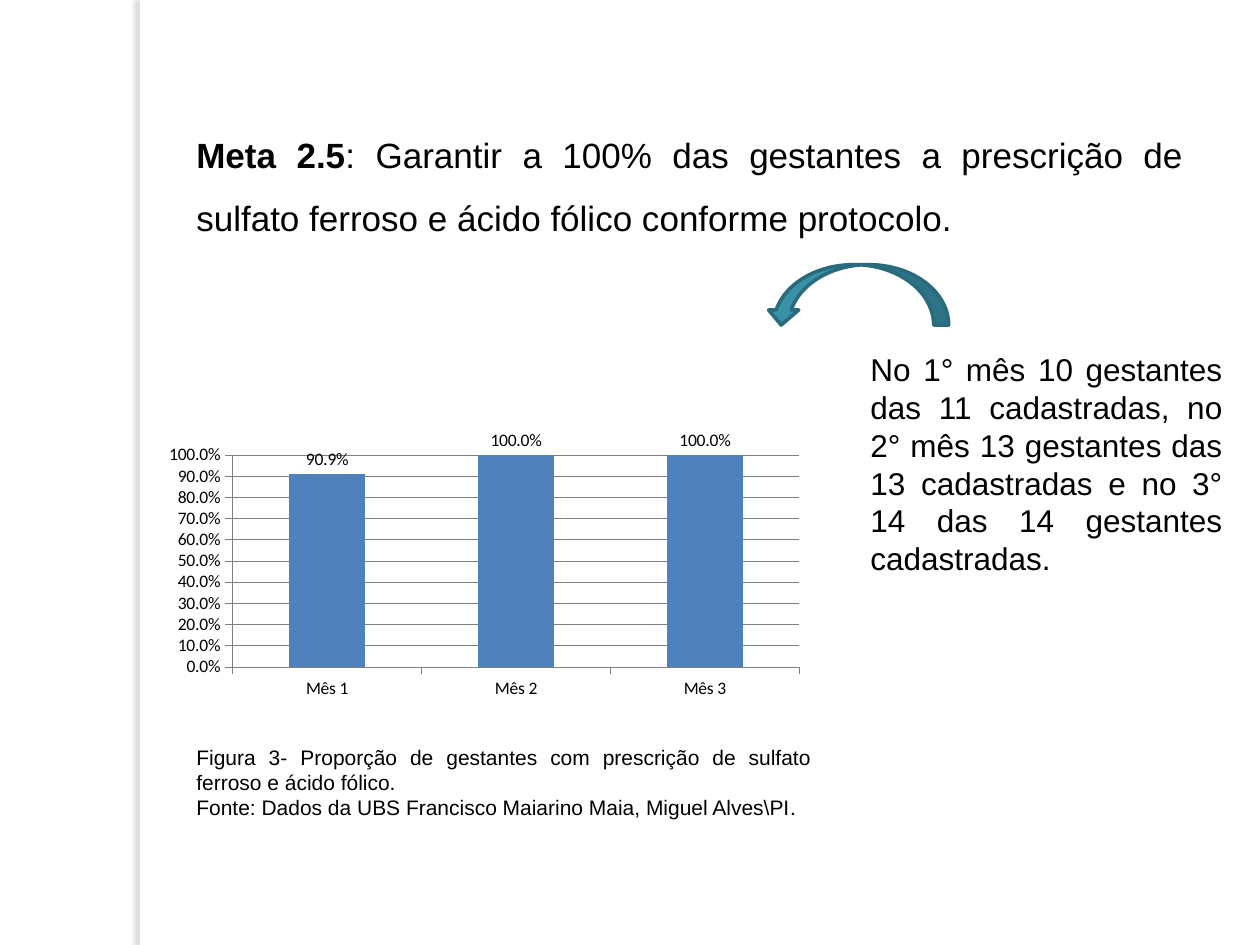
from lxml.etree import SubElement
from pptx import Presentation
from pptx.chart.data import CategoryChartData
from pptx.dml.color import RGBColor
from pptx.enum.chart import XL_CHART_TYPE, XL_LABEL_POSITION, XL_TICK_MARK
from pptx.enum.shapes import MSO_SHAPE
from pptx.enum.text import PP_ALIGN
from pptx.oxml import parse_xml
from pptx.oxml.ns import nsdecls, qn
from pptx.util import Inches, Pt

BLACK = RGBColor(0x00, 0x00, 0x00)
WHITE = RGBColor(0xFF, 0xFF, 0xFF)
GREY = RGBColor(0x80, 0x80, 0x80)
BLUE = RGBColor(0x4F, 0x81, 0xBD)
TEAL = RGBColor(0x38, 0x91, 0xA7)
DARK = RGBColor(0x29, 0x6B, 0x7C)


def add_strip(slide, box):
    strip = slide.shapes.add_shape(MSO_SHAPE.RECTANGLE, *map(Inches, box))
    strip.fill.solid()
    strip.fill.fore_color.rgb = WHITE
    strip.line.fill.background()
    strip._element.spPr.append(parse_xml(
        f'<a:effectLst {nsdecls("a")}>'
        f'<a:outerShdw blurRad="{Pt(3)}" dist="{Pt(3)}" dir="10800000" algn="tl" rotWithShape="0">'
        '<a:srgbClr val="736F63"><a:alpha val="25000"/></a:srgbClr>'
        '</a:outerShdw></a:effectLst>'))


def add_text(slide, box, paras, size, space=1.0):
    frame = slide.shapes.add_textbox(*map(Inches, box)).text_frame
    frame.word_wrap = True
    for i, runs in enumerate(paras):
        para = frame.paragraphs[0] if i == 0 else frame.add_paragraph()
        para.alignment = PP_ALIGN.JUSTIFY
        para.line_spacing = space
        para.font.size = Pt(size)
        para.font.name = "Arial"
        para.font.color.rgb = BLACK
        for text in runs:
            para.add_run().text = text
    return frame


def add_title(slide, box):
    frame = add_text(slide, box, [(
        "Meta 2.5",
        ": Garantir a 100% das gestantes a prescrição de sulfato ferroso "
        "e ácido fólico conforme protocolo.")], 20, 1.5)
    frame.paragraphs[0].runs[0].font.bold = True


def add_note(slide, box):
    add_text(slide, box, [(
        "No 1° mês 10 gestantes das 11 cadastradas, no 2° mês 13 gestantes "
        "das 13 cadastradas e no 3° 14 das 14 gestantes cadastradas.",)], 18)


def add_caption(slide, box):
    frame = add_text(slide, box, [
        ("Figura 3- Proporção de gestantes com prescrição de sulfato "
         "ferroso e ácido fólico.",),
        ("Fonte: Dados da UBS Francisco Maiarino Maia, Miguel Alves\\PI", ".")], 12)
    frame.paragraphs[1].runs[1].font.name = "Calibri"


def add_arrow(slide, box):
    arrow = slide.shapes.add_shape(MSO_SHAPE.CURVED_DOWN_ARROW, *map(Inches, box))
    arrow.shadow.inherit = False
    arrow.fill.solid()
    arrow.fill.fore_color.rgb = TEAL
    arrow.line.color.rgb = DARK
    arrow.line.width = Pt(2)
    arrow._element.spPr.xfrm.set("flipH", "1")


def set_font(font):
    font.name = "Calibri"
    font.size = Pt(10)
    font.color.rgb = BLACK


def set_line(line):
    line.color.rgb = GREY
    line.width = Pt(0.25)


def set_plot(chart, place):
    area = chart._chartSpace.chart.plotArea
    for old in area.findall(qn("c:layout")):
        area.remove(old)
    layout = parse_xml(f'<c:layout {nsdecls("c")}><c:manualLayout/></c:layout>')
    modes = [("layoutTarget", "inner"), ("xMode", "edge"), ("yMode", "edge")]
    for tag, val in modes + list(zip("xywh", place)):
        SubElement(layout[0], qn(f"c:{tag}")).set("val", str(val))
    area.insert(0, layout)


def add_graph(slide, box):
    data = CategoryChartData(number_format="0.0%")
    data.categories = ["Mês 1", "Mês 2", "Mês 3"]
    data.add_series("Series 1", (0.909, 1, 1))
    chart = slide.shapes.add_chart(
        XL_CHART_TYPE.COLUMN_CLUSTERED, *map(Inches, box), data).chart
    chart.has_legend = False
    chart.has_title = False
    set_font(chart.font)
    set_plot(chart, (0.1, 0.24, 0.87, 0.63))

    for axis in (chart.category_axis, chart.value_axis):
        axis.major_tick_mark = XL_TICK_MARK.OUTSIDE
        set_font(axis.tick_labels.font)
        set_line(axis.format.line)
    axis = chart.value_axis
    axis.minimum_scale, axis.maximum_scale, axis.major_unit = 0, 1, 0.1
    axis.tick_labels.number_format = "0.0%"
    axis.tick_labels.number_format_is_linked = False
    set_line(axis.major_gridlines.format.line)

    plot = chart.plots[0]
    plot.vary_by_categories = False
    plot.gap_width = 150
    fill = plot.series[0].format.fill
    fill.solid()
    fill.fore_color.rgb = BLUE
    plot.has_data_labels = True
    labels = plot.data_labels
    labels.show_value = True
    labels.number_format = "0.0%"
    labels.number_format_is_linked = False
    labels.position = XL_LABEL_POSITION.OUTSIDE_END
    set_font(labels.font)


def main():
    deck = Presentation()
    deck.slide_width, deck.slide_height = Inches(10), Inches(7.5)
    slide = deck.slides.add_slide(deck.slide_layouts[6])
    add_strip(slide, (1.11, 0, 0.08, 7.5))
    add_title(slide, (1.46, 0.84, 8.03, 1.11))
    add_note(slide, (6.81, 2.73, 2.99, 1.92))
    add_arrow(slide, (6.08, 2.1, 1.45, 0.48))
    add_caption(slide, (1.46, 5.86, 5.08, 0.71))
    add_graph(slide, (1.33, 2.97, 5.17, 2.67))
    deck.save("out.pptx")


if __name__ == "__main__":
    main()
